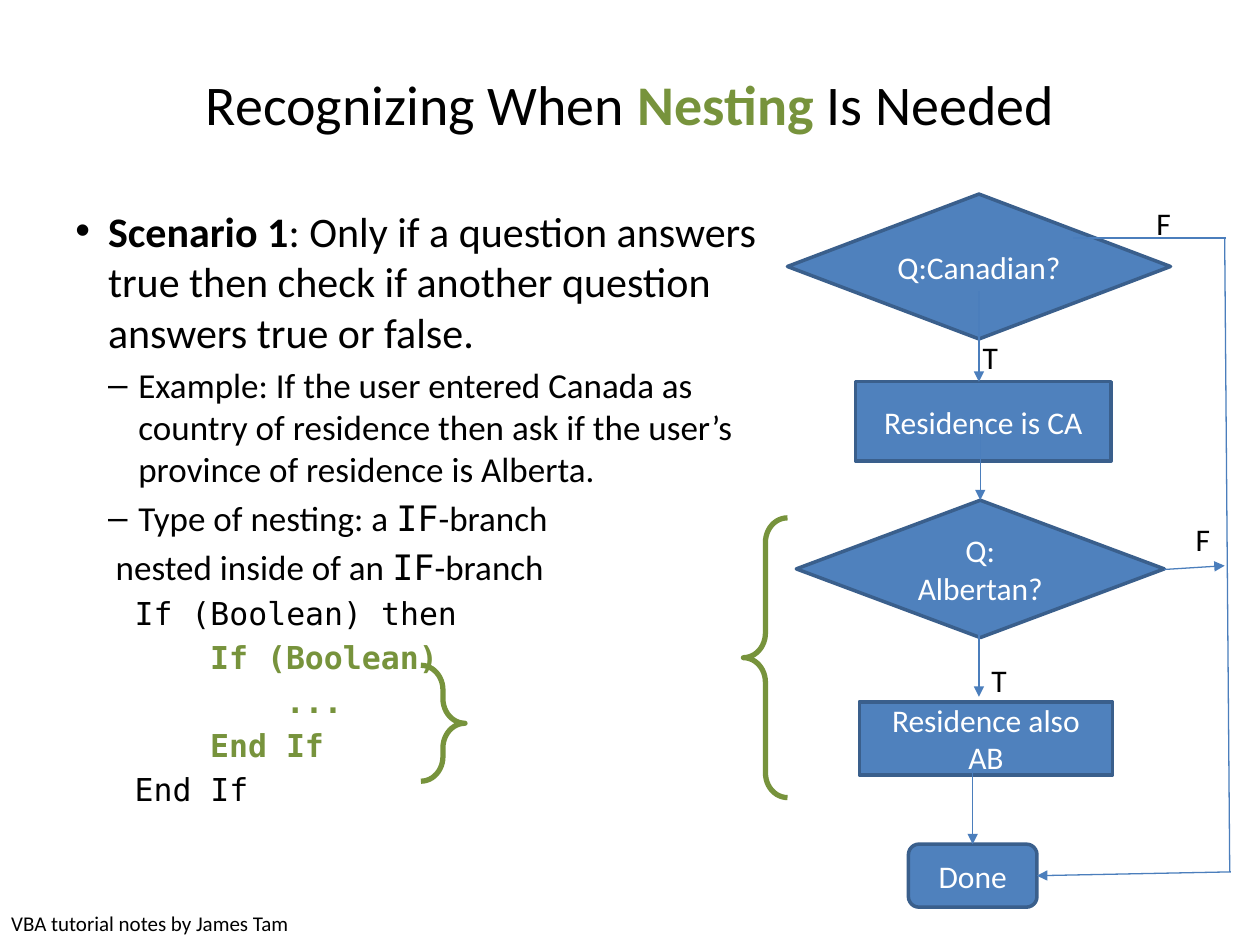
import dataclasses
import lxml.etree
import pptx
import pptx.dml.color
import pptx.enum.shapes
import pptx.enum.text
import pptx.oxml.ns
import pptx.util

Inches = pptx.util.Inches
Shape = pptx.enum.shapes.MSO_SHAPE
Align = pptx.enum.text.PP_ALIGN
Anchor = pptx.enum.text.MSO_ANCHOR


@dataclasses.dataclass(frozen=True)
class Theme:
    ink: str = "000000"
    paper: str = "FFFFFF"
    green: str = "77933C"
    fill: str = "4F81BD"
    edge: str = "3A5F8C"
    wire: str = "4B7EBC"
    sans: str = "Calibri"
    mono: str = "DejaVu Sans Mono"
    title: int = 32
    lead: int = 24
    point: int = 20
    label: int = 18
    note: int = 12


theme = Theme()


def color(code):
    return pptx.dml.color.RGBColor.from_string(code)


def node(parent, tag, **attrs):
    name = pptx.oxml.ns.qn(tag)
    return lxml.etree.SubElement(parent, name, **attrs)


def style(font, size, ink=theme.ink, face=theme.sans, bold=False):
    font.size = pptx.util.Pt(size)
    font.color.rgb = color(ink)
    font.name = face
    font.bold = bold


def area(slide, x, y, w, h, anchor=Anchor.TOP):
    frame = slide.shapes.add_textbox(
        Inches(x), Inches(y), Inches(w), Inches(h)).text_frame
    frame.word_wrap = True
    frame.vertical_anchor = anchor
    return frame


def label(slide, x, y, w, h, text, size=theme.label):
    para = area(slide, x, y, w, h).paragraphs[0]
    para.text = text
    style(para.font, size)


def form(slide, kind, x, y, w, h, edge, width):
    shape = slide.shapes.add_shape(
        kind, Inches(x), Inches(y), Inches(w), Inches(h))
    shape.shadow.inherit = False
    shape.line.color.rgb = color(edge)
    shape.line.width = pptx.util.Pt(width)
    return shape


def step(slide, kind, x, y, w, h, text):
    shape = form(slide, kind, x, y, w, h, theme.edge, 2)
    shape.fill.solid()
    shape.fill.fore_color.rgb = color(theme.fill)
    frame = shape.text_frame
    frame.word_wrap = True
    frame.vertical_anchor = Anchor.MIDDLE
    para = frame.paragraphs[0]
    para.text = text
    para.alignment = Align.CENTER
    style(para.font, theme.label, theme.paper)


def brace(slide, x, y, w, h, turn=0):
    shape = form(slide, Shape.LEFT_BRACE, x, y, w, h, theme.green, 3)
    shape.fill.background()
    shape.adjustments[0] = 0.557
    shape.rotation = turn


def wire(slide, x1, y1, x2, y2, arrow=True):
    line = slide.shapes.add_connector(
        pptx.enum.shapes.MSO_CONNECTOR.STRAIGHT,
        Inches(x1), Inches(y1), Inches(x2), Inches(y2))
    line.line.color.rgb = color(theme.wire)
    line.line.width = pptx.util.Pt(0.75)
    if arrow:
        node(line.line._get_or_add_ln(), "a:tailEnd", type="triangle")
    node(line._element.spPr, "a:effectLst")


def indent(para, left, bullet=None, hang=0):
    props = para._p.get_or_add_pPr()
    props.set("marL", str(Inches(left)))
    props.set("indent", str(-Inches(hang)))
    space = node(props, "a:spcBef")
    node(space, "a:spcPct", val="20000")
    if bullet:
        node(props, "a:buFont", typeface="Arial")
        node(props, "a:buChar", char=bullet)
    else:
        node(props, "a:buNone")


def title(slide, x, y, w, h):
    para = area(slide, x, y, w, h, Anchor.MIDDLE).paragraphs[0]
    para.alignment = Align.CENTER
    for text, ink in (("Recognizing When ", theme.ink),
                      ("Nesting", theme.green),
                      (" Is Needed", theme.ink)):
        run = para.add_run()
        run.text = text
        style(run.font, theme.title, ink, bold=ink == theme.green)


def body(slide, x, y, w, h):
    frame = area(slide, x, y, w, h)
    lead = frame.paragraphs[0]
    indent(lead, 0.26, "•", 0.26)
    for text, bold in (
            ("Scenario 1", True),
            (": Only if a question answers true then check if another "
             "question answers true or false.", False)):
        run = lead.add_run()
        run.text = text
        style(run.font, theme.lead, bold=bold)

    points = (
        (("Example: If the user entered Canada as country of residence then "
          "ask if the user’s province of residence is Alberta.",),
         0.5, "–", 0.24),
        (("Type of nesting: a ", "IF", "-branch"), 0.5, "–", 0.24),
        (("nested inside of an ", "IF", "-branch"), 0.32, None, 0),
    )
    for parts, left, bullet, hang in points:
        para = frame.add_paragraph()
        indent(para, left, bullet, hang)
        for text in parts:
            run = para.add_run()
            run.text = text
            face = theme.mono if text == "IF" else theme.sans
            style(run.font, theme.point, face=face)

    code = (("If (Boolean) then", 0), ("If (Boolean)", 1), ("...", 2),
            ("End If", 1), ("End If", 0))
    for text, depth in code:
        para = frame.add_paragraph()
        para.text = text
        indent(para, 0.47 + 0.6 * depth)
        ink = theme.green if depth else theme.ink
        style(para.font, theme.label, ink, theme.mono, depth > 0)
    brace(slide, x + 2.84, y + 3.7, 0.35, 0.92, 180)


def flow(slide, x, y):
    steps = (
        (Shape.DIAMOND, 0, 0, 3.04, 1.15, "Q:Canadian?"),
        (Shape.RECTANGLE, 0.54, 1.49, 2.03, 0.63, "Residence is CA"),
        (Shape.DIAMOND, 0.07, 2.43, 2.92, 1.09, "Q: Albertan?"),
        (Shape.RECTANGLE, 0.57, 4.03, 2.01, 0.58, "Residence also AB"),
        (Shape.ROUNDED_RECTANGLE, 0.96, 5.16, 1.02, 0.5, "Done"),
    )
    for kind, dx, dy, w, h, text in steps:
        step(slide, kind, x + dx, y + dy, w, h, text)

    wires = (
        (2.27, 0.35, 3.48, 0.35, False),
        (3.51, 5.38, 3.47, 0.35, False),
        (3.52, 5.38, 1.98, 5.41, True),
        (2.99, 2.98, 3.47, 2.95, True),
        (1.52, 0.77, 1.52, 1.49, True),
        (1.53, 1.85, 1.53, 2.43, True),
        (1.52, 3.47, 1.52, 3.99, True),
        (1.47, 4.55, 1.47, 5.16, True),
    )
    for x1, y1, x2, y2, arrow in wires:
        wire(slide, x + x1, y + y1, x + x2, y + y2, arrow)

    for text, dx, dy, w in (("F", 2.83, 0.03, 0.67), ("F", 3.14, 2.54, 0.67),
                            ("T", 1.45, 1.09, 0.67), ("T", 1.52, 3.66, 0.33)):
        label(slide, x + dx, y + dy, w, 0.4, text)
    brace(slide, x - 0.35, y + 2.57, 0.35, 2.22)


def main():
    deck = pptx.Presentation()
    deck.slide_width = Inches(10)
    deck.slide_height = Inches(7.5)
    slide = deck.slides.add_slide(deck.slide_layouts[6])
    label(slide, -0.01, 7.18, 3.42, 0.3,
          "VBA tutorial notes by James Tam", theme.note)
    title(slide, 0.5, 0.3, 9, 1.03)
    body(slide, 0.5, 1.58, 5.83, 5.5)
    flow(slide, 6.25, 1.54)
    deck.save("out.pptx")


if __name__ == "__main__":
    main()
